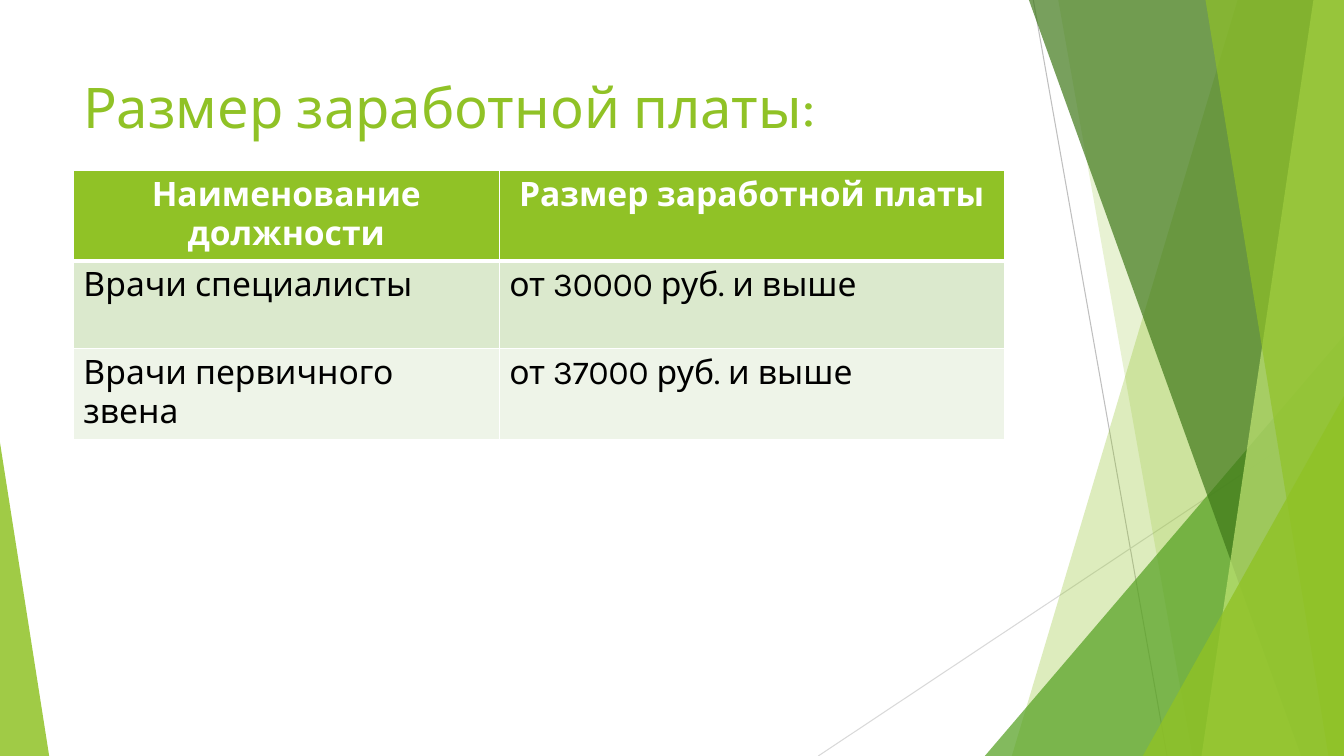
import pptx
import pptx.dml.color
import pptx.enum.shapes
import pptx.enum.text
import pptx.oxml
import pptx.oxml.ns
import pptx.util
from pptx.util import Cm

WIDTH, HEIGHT = 33.87, 19.05
FONT = "Karla"
GREEN = "90C226"
WHITE = "FFFFFF"
ROWS = [
    ("Наименование должности", "Размер заработной платы"),
    ("Врачи специалисты", "от 30000 руб. и выше"),
    ("Врачи первичного звена", "от 37000 руб. и выше"),
]
ROW_FILLS = [GREEN, "DBE9CD", "EEF4E8"]


def color(value):
    """Turn a hex string into a colour."""
    return pptx.dml.color.RGBColor.from_string(value)


def add_child(parent, tag, **attributes):
    """Append a DrawingML element with the given attributes."""
    child = pptx.oxml.ns.qn(tag)
    element = parent.makeelement(child, attributes)
    parent.append(element)
    return element


def paint(shape, fill, opacity):
    """Give a shape a translucent fill without outline or shadow."""
    shape.shadow.inherit = False
    shape.fill.solid()
    shape.fill.fore_color.rgb = color(fill)
    shape.line.fill.background()
    solid = shape.fill._xPr.find(pptx.oxml.ns.qn("a:solidFill"))
    add_child(solid[0], "a:alpha", val=str(opacity * 1000))


def add_thin_line(slide, start, end, line_color):
    """Draw a hairline between two points."""
    points = [Cm(value) for value in (*start, *end)]
    connector = slide.shapes.add_connector(
        pptx.enum.shapes.MSO_CONNECTOR.STRAIGHT, *points)
    connector.line.color.rgb = color(line_color)
    connector.line.width = pptx.util.Pt(0.75)
    add_child(connector._element.spPr, "a:effectLst")


def add_panel(slide, top_x, bottom_x, fill, opacity):
    """Draw a full-height panel from a slanted edge to the right margin."""
    builder = slide.shapes.build_freeform(Cm(top_x), 0)
    corners = [(WIDTH, 0), (WIDTH, HEIGHT), (bottom_x, HEIGHT)]
    builder.add_line_segments([(Cm(x), Cm(y)) for x, y in corners])
    paint(builder.convert_to_shape(), fill, opacity)


def add_corner(slide, left, top, width, apex, fill, opacity):
    """Draw a right triangle that stands on the bottom edge."""
    shape = slide.shapes.add_shape(
        pptx.enum.shapes.MSO_SHAPE.ISOSCELES_TRIANGLE,
        Cm(left), Cm(top), Cm(width), Cm(HEIGHT - top))
    shape.adjustments[0] = apex
    paint(shape, fill, opacity)


def set_font(paragraph, size, font_color, bold=False):
    """Set the font of a whole paragraph."""
    paragraph.font.name = FONT
    paragraph.font.size = pptx.util.Pt(size)
    paragraph.font.bold = bold
    paragraph.font.color.rgb = color(font_color)


def add_title(slide, text):
    """Write the slide title."""
    box = slide.shapes.add_textbox(Cm(1.85), Cm(1.7), Cm(23.88), Cm(1.45))
    box.text_frame.word_wrap = True
    paragraph = box.text_frame.paragraphs[0]
    paragraph.text = text
    set_font(paragraph, 40, GREEN)


def set_borders(cell, top, bottom):
    """Draw white cell borders, with top and bottom widths in points."""
    properties = cell._tc.get_or_add_tcPr()
    widths = {"a:lnL": 1, "a:lnR": 1, "a:lnT": top, "a:lnB": bottom}
    for index, (tag, width) in enumerate(widths.items()):
        line = add_child(properties, tag, w=str(pptx.util.Pt(width)))
        solid = add_child(line, "a:solidFill")
        add_child(solid, "a:srgbClr", val=WHITE)
        properties.insert(index, line)


def add_salary_table(slide):
    """Build the table of positions and salaries."""
    table = slide.shapes.add_table(
        len(ROWS), 2, Cm(1.85), Cm(4.29), Cm(23.46), Cm(6.63)).table
    for column, width in zip(table.columns, (10.73, 12.73)):
        column.width = Cm(width)
    for row_index, texts in enumerate(ROWS):
        header = row_index == 0
        for column_index, text in enumerate(texts):
            cell = table.cell(row_index, column_index)
            cell.fill.solid()
            cell.fill.fore_color.rgb = color(ROW_FILLS[row_index])
            set_borders(cell, 3 if row_index == 1 else 1, 3 if header else 1)
            paragraph = cell.text_frame.paragraphs[0]
            paragraph.text = text
            set_font(paragraph, 24, WHITE if header else "000000", header)
            if header:
                paragraph.alignment = pptx.enum.text.PP_ALIGN.CENTER


def add_decoration(slide):
    """Draw the green facets along the slide edges."""
    add_thin_line(slide, (26.04, 0), (29.41, HEIGHT), "BFBFBF")
    add_thin_line(slide, (WIDTH, 10.24), (20.62, HEIGHT), "D9D9D9")
    add_panel(slide, 31.19, 25.5, GREEN, 30)
    add_panel(slide, 26.67, 30.05, GREEN, 20)
    add_corner(slide, 24.82, 8.46, 9.05, 1, "54A021", 72)
    add_panel(slide, 25.93, 32.79, "3F7819", 70)
    add_panel(slide, 33.1, 30.28, "C0E474", 70)
    add_panel(slide, 30.38, 33.48, GREEN, 65)
    add_corner(slide, 28.8, 9.98, 5.07, 1, GREEN, 80)
    add_corner(slide, 0, 11.15, 1.24, 0, GREEN, 85)


def main():
    """Build the salary slide and save it."""
    presentation = pptx.Presentation()
    presentation.slide_width = Cm(WIDTH)
    presentation.slide_height = Cm(HEIGHT)
    slide = presentation.slides.add_slide(presentation.slide_layouts[6])
    add_decoration(slide)
    add_title(slide, "Размер заработной платы:")
    add_salary_table(slide)
    presentation.save("out.pptx")


if __name__ == "__main__":
    main()
